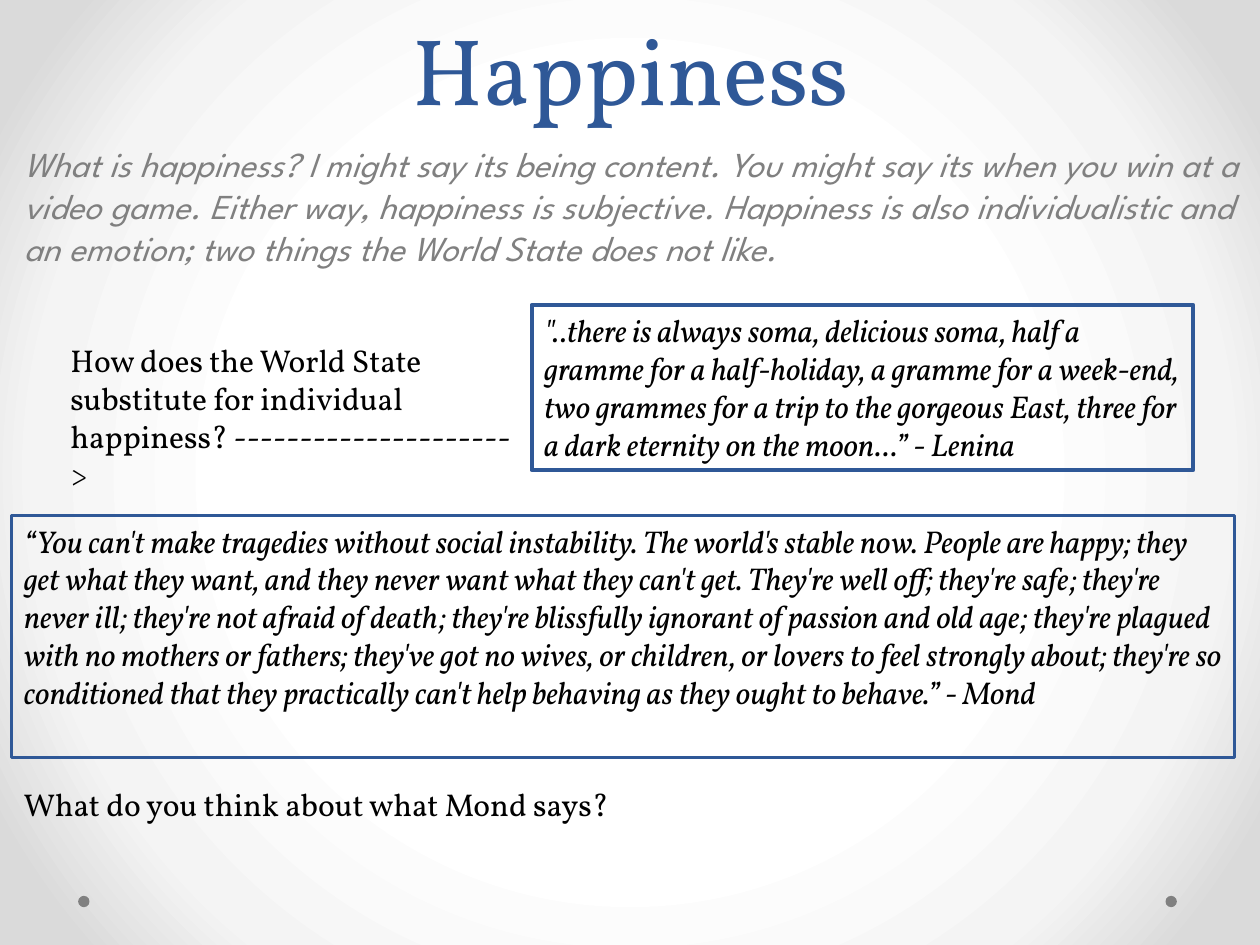
from lxml import etree
from pptx import Presentation
from pptx.dml.color import RGBColor
from pptx.enum import shapes, text
from pptx.oxml.ns import qn
from pptx.util import Inches, Pt

BLUE, GRAY, BLACK = "2F5897", "808080", "000000"
SERIF, SANS = "Vollkorn", "League Spartan"
SOMA = ('"..there is always soma, delicious soma, half a gramme for a half-holiday, '
        "a gramme for a week-end, two grammes for a trip to the gorgeous East, "
        "three for a dark eternity on the moon...” - Lenina")
MOND = ("“You can't make tragedies without social instability. The world's stable now. "
        "People are happy; they get what they want, and they never want what they can't get. "
        "They're well off; they're safe; they're never ill; they're not afraid of death; "
        "they're blissfully ignorant of passion and old age; they're plagued with no mothers "
        "or fathers; they've got no wives, or children, or lovers to feel strongly about; "
        "they're so conditioned that they practically can't help behaving as they ought to "
        "behave.” - Mond")
INTRO = ("What is happiness? I might say its being content. You might say its when you win "
         "at a video game. Either way, happiness is subjective. Happiness is also "
         "individualistic and an emotion; two things the World State does not like.")


def color(code):
    """Turn a hex string into a colour."""
    return RGBColor.from_string(code)


def backdrop(slide):
    """Fill the background with a radial gradient."""
    fill = slide.background.fill
    fill.gradient()
    grad = fill._fill._gradFill
    for part in list(grad):
        grad.remove(part)
    stops = etree.SubElement(grad, qn("a:gsLst"))
    for place, code in ((50, "FFFFFF"), (76, "F4F4F4"), (92, "DADADA")):
        stop = etree.SubElement(stops, qn("a:gs"), pos=str(place * 1000))
        etree.SubElement(stop, qn("a:srgbClr"), val=code)
    ring = etree.SubElement(grad, qn("a:path"), path="circle")
    etree.SubElement(ring, qn("a:fillToRect"), l="50000", t="50000", r="50000", b="50000")


def write(shape, words, size=18, face=SERIF, code=BLACK, italic=False):
    """Write one run into a shape and return its paragraph."""
    frame = shape.text_frame
    frame.word_wrap = True
    frame.vertical_anchor = text.MSO_ANCHOR.TOP
    para = frame.paragraphs[0]
    para.alignment = text.PP_ALIGN.LEFT
    run = para.add_run()
    run.text = words
    font = run.font
    font.size, font.name, font.italic = Pt(size), face, italic
    font.color.rgb = color(code)
    return para


def head(slide, words):
    """Place and format the title."""
    title = slide.shapes.title
    title.left, title.top = Inches(0.88), Inches(0.15)
    title.width, title.height = Inches(8.25), Inches(0.89)
    para = write(title, words, 54, code=BLUE)
    para.alignment = text.PP_ALIGN.CENTER
    para.line_spacing = Pt(58)
    title.text_frame.vertical_anchor = text.MSO_ANCHOR.BOTTOM
    title.text_frame.auto_size = text.MSO_AUTO_SIZE.NONE


def note(slide, box, words, **style):
    """Add a plain text box."""
    return write(slide.shapes.add_textbox(*map(Inches, box)), words, **style)


def quote(slide, box, words, width):
    """Add an italic quote in a blue frame."""
    shape = slide.shapes.add_shape(shapes.MSO_SHAPE.RECTANGLE, *map(Inches, box))
    shape.shadow.inherit = False
    shape.fill.background()
    shape.line.color.rgb = color(BLUE)
    shape.line.width = Pt(width)
    write(shape, words, italic=True)


def dot(slide, left):
    """Add a small gray dot near the foot."""
    shape = slide.shapes.add_shape(
        shapes.MSO_SHAPE.OVAL, *map(Inches, (left, 7.11, 0.09, 0.09)))
    shape.shadow.inherit = False
    shape.fill.solid()
    shape.fill.fore_color.rgb = color(GRAY)
    shape.line.fill.background()


def main():
    """Build and save the slide."""
    deck = Presentation()
    deck.slide_width, deck.slide_height = Inches(10), Inches(7.5)
    slide = deck.slides.add_slide(deck.slide_layouts[5])
    backdrop(slide)
    for left in (9.25, 0.62):
        dot(slide, left)
    head(slide, "Happiness")
    intro = note(slide, (0.09, 1.08, 9.91, 1.34), INTRO,
                 size=20, face=SANS, code=GRAY, italic=True)
    intro.space_before = Pt(4)
    quote(slide, (0.09, 4.09, 9.71, 1.92), MOND, 1.75)
    note(slide, (0.09, 6.18, 6.13, 0.4), "What do you think about what Mond says?")
    quote(slide, (4.22, 2.42, 5.25, 1.31), SOMA, 2.5)
    note(slide, (0.46, 2.66, 3.76, 1.01),
         "How does the World State substitute for individual happiness? "
         "--------------------- >")
    deck.save("out.pptx")


if __name__ == "__main__":
    main()
